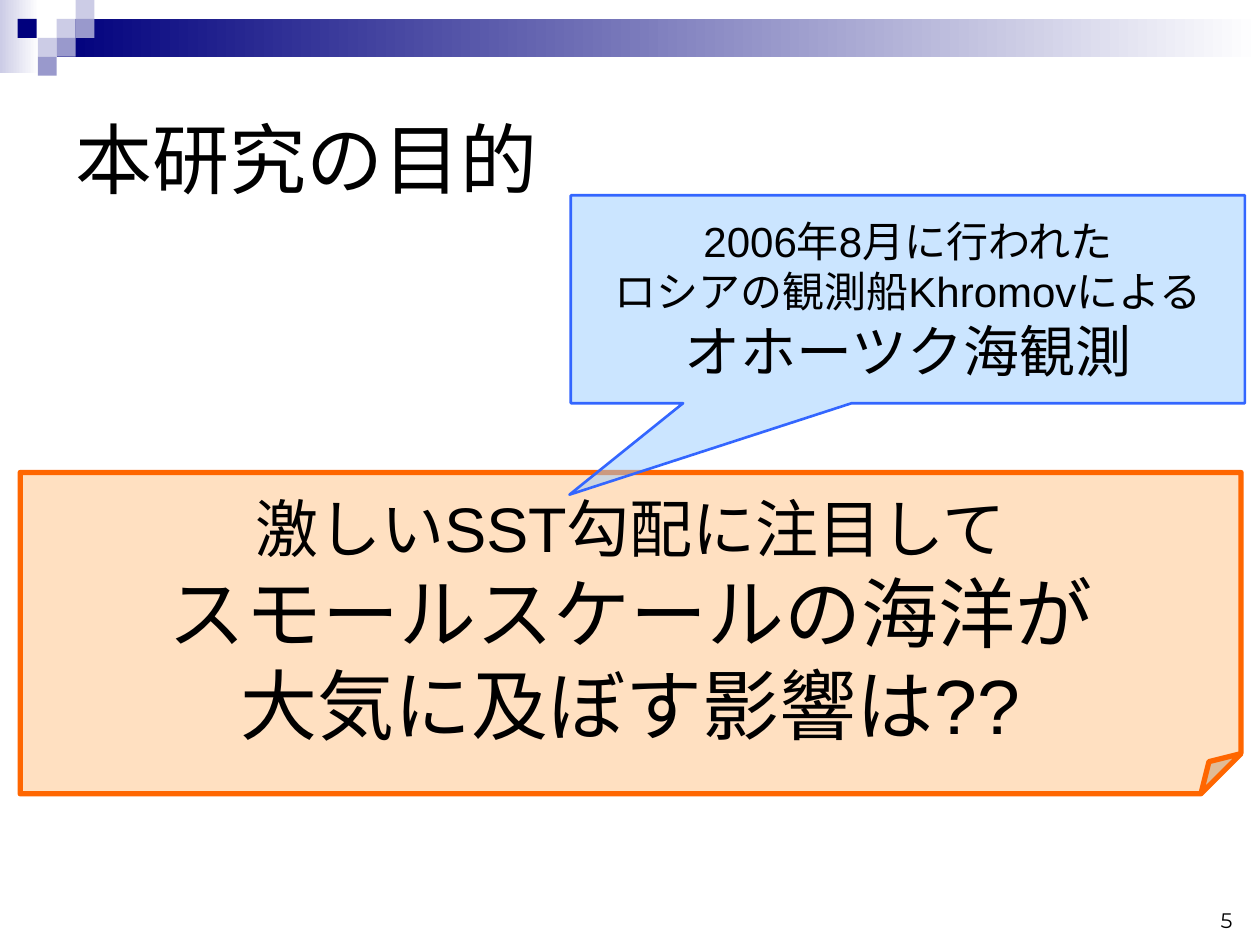
from lxml import etree
from pptx import Presentation
from pptx.dml.color import RGBColor
from pptx.enum.shapes import MSO_SHAPE
from pptx.enum.text import MSO_ANCHOR, PP_ALIGN
from pptx.oxml.ns import qn
from pptx.util import Inches, Pt

RECTANGLE = MSO_SHAPE.RECTANGLE
FOLDED_NOTE = MSO_SHAPE.FOLDED_CORNER
CALLOUT = MSO_SHAPE.RECTANGULAR_CALLOUT
LEFT, CENTER, RIGHT = PP_ALIGN.LEFT, PP_ALIGN.CENTER, PP_ALIGN.RIGHT
MIDDLE, BOTTOM = MSO_ANCHOR.MIDDLE, MSO_ANCHOR.BOTTOM

NAVY, LAVENDER, PERIWINKLE = "00007D", "CCCCE6", "9999CC"
WHITE, BLACK = "FFFFFF", "000000"
TILE = 0.15
TILES = [
    (0.45, 0.15, LAVENDER),
    (0.6, 0, LAVENDER),
    (0.6, 0.15, PERIWINKLE),
    (0.3, 0.3, LAVENDER),
    (0.14, 0.15, NAVY),
    (0.45, 0.3, PERIWINKLE),
    (0.3, 0.45, PERIWINKLE),
]


def color(hex_code):
    """Turn a hex string into a colour."""
    return RGBColor.from_string(hex_code)


def add_block(slide, kind, box):
    """Add a preset shape without shadow or outline."""
    block = slide.shapes.add_shape(kind, *map(Inches, box))
    block.shadow.inherit = False
    block.line.fill.background()
    return block


def add_tile(slide, left, top, fill):
    """Add one small square of the header mosaic."""
    tile = add_block(slide, RECTANGLE, (left, top, TILE, TILE))
    tile.fill.solid()
    tile.fill.fore_color.rgb = color(fill)


def add_fade(slide, box, start):
    """Add a band that fades from a colour to white, left to right."""
    band = add_block(slide, RECTANGLE, box)
    band.fill.gradient()
    band.fill.gradient_angle = 0
    for stop, shade, position in zip(band.fill.gradient_stops, (start, WHITE), (0, 1)):
        stop.color.rgb = color(shade)
        stop.position = position


def write_lines(frame, lines, align, anchor, font="Arial"):
    """Write (text, size) lines into a text frame."""
    frame.word_wrap = True
    frame.vertical_anchor = anchor
    for index, (text, size) in enumerate(lines):
        paragraph = frame.add_paragraph() if index else frame.paragraphs[0]
        paragraph.text = text
        paragraph.alignment = align
        paragraph.font.name = font
        paragraph.font.size = Pt(size)
        paragraph.font.color.rgb = color(BLACK)


def add_label(slide, box, text, size, align, anchor, font="Arial"):
    """Add a text box with one line."""
    label = slide.shapes.add_textbox(*map(Inches, box))
    write_lines(label.text_frame, [(text, size)], align, anchor, font)


def set_opacity(shape, percent):
    """Make the solid fill of a shape translucent."""
    shade = shape.element.spPr.find(qn("a:solidFill"))[0]
    etree.SubElement(shade, qn("a:alpha"), val=str(percent * 1000))


def set_guides(shape, guides):
    """Set the named geometry guides of a preset shape."""
    guide_list = next(shape.element.spPr.iter(qn("a:avLst")))
    for guide in list(guide_list):
        guide_list.remove(guide)
    for name, value in guides.items():
        etree.SubElement(guide_list, qn("a:gd"), name=name, fmla=f"val {value}")


def add_panel(slide, kind, box, guides, fill, opacity, outline, width, lines):
    """Add an outlined, translucent shape with centred lines."""
    panel = add_block(slide, kind, box)
    set_guides(panel, guides)
    panel.fill.solid()
    panel.fill.fore_color.rgb = color(fill)
    set_opacity(panel, opacity)
    panel.line.color.rgb = color(outline)
    panel.line.width = Pt(width)
    write_lines(panel.text_frame, lines, CENTER, MIDDLE)
    return panel


def main():
    """Build the slide on the purpose of the study."""
    deck = Presentation()
    deck.slide_width, deck.slide_height = Inches(10), Inches(7.5)
    slide = deck.slides.add_slide(deck.slide_layouts[6])

    add_fade(slide, (0, 0, 0.31, 0.58), LAVENDER)
    add_fade(slide, (0.45, 0.15, 9.55, 0.3), NAVY)
    for left, top, fill in TILES:
        add_tile(slide, left, top, fill)

    add_label(slide, (7.55, 6.95, 2.33, 0.5), "5", 12, RIGHT, BOTTOM, "Montserrat")
    add_label(slide, (0.5, 0.5, 9, 1.5), "本研究の目的", 44, LEFT, MIDDLE)

    question = add_panel(
        slide, FOLDED_NOTE, (0.16, 3.75, 9.69, 2.55), {"adj": 12500},
        "FFCC99", 60, "FF6600", 3,
        [("激しいSST勾配に注目して", 36),
         ("スモールスケールの海洋が", 44),
         ("大気に及ぼす影響は??", 44)],
    )
    question.text_frame.margin_top = Inches(0.16)
    add_panel(
        slide, CALLOUT, (4.53, 1.55, 5.35, 1.65), {"adj1": -50200, "adj2": 94000},
        "99CCFF", 50, "3366FF", 1.5,
        [("2006年8月に行われた", 24),
         ("ロシアの観測船Khromovによる", 24),
         ("オホーツク海観測", 32)],
    )
    deck.save("out.pptx")


if __name__ == "__main__":
    main()
